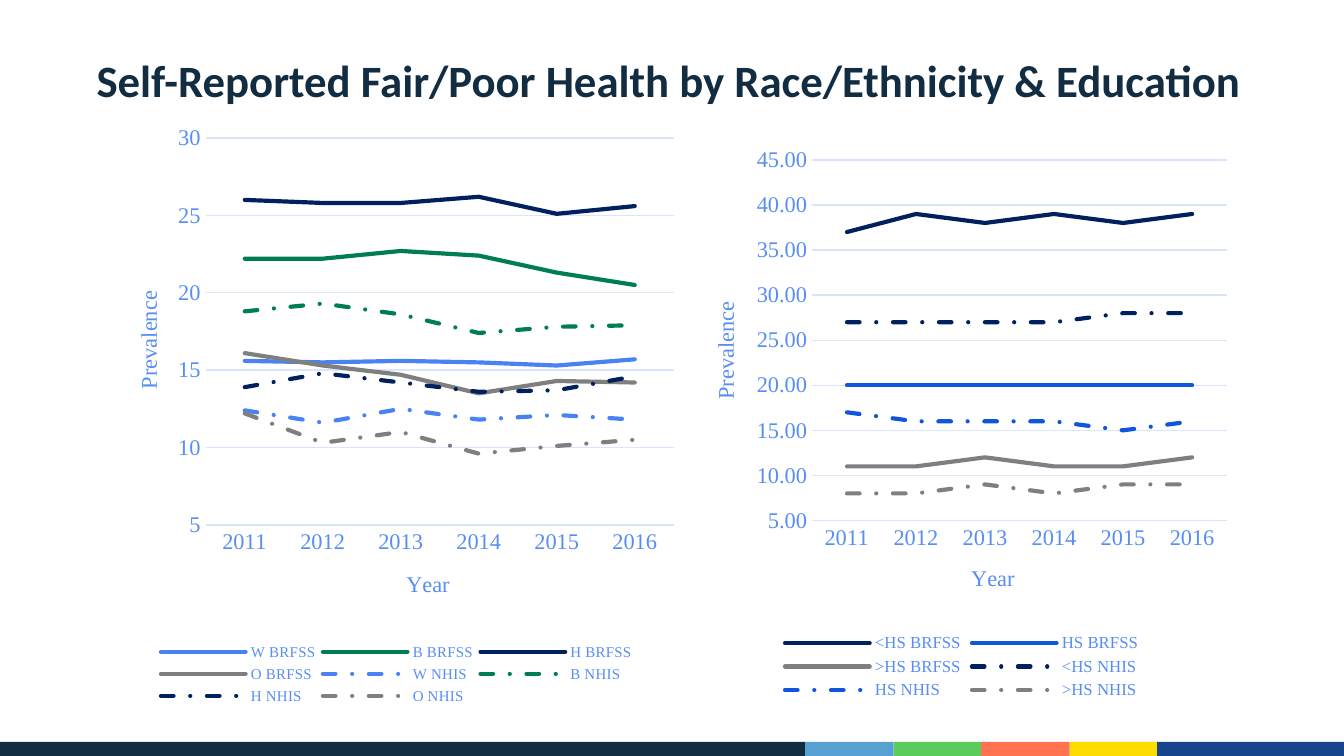
"""Build a slide with two line charts of self-reported fair/poor health."""
from lxml import etree
from pptx import Presentation
from pptx.chart.data import CategoryChartData
from pptx.dml.color import RGBColor
from pptx.enum.chart import XL_CHART_TYPE, XL_LEGEND_POSITION, XL_TICK_MARK
from pptx.enum.dml import MSO_LINE
from pptx.enum.shapes import MSO_SHAPE
from pptx.enum.text import MSO_ANCHOR, PP_ALIGN
from pptx.oxml.ns import qn
from pptx.util import Inches, Pt

LINE_CHART = XL_CHART_TYPE.LINE
BOTTOM = XL_LEGEND_POSITION.BOTTOM
NO_TICK = XL_TICK_MARK.NONE
DASH_DOT = MSO_LINE.DASH_DOT
RECTANGLE = MSO_SHAPE.RECTANGLE
MIDDLE = MSO_ANCHOR.MIDDLE
LEFT = PP_ALIGN.LEFT

WIDTH = 10
HEIGHT = WIDTH * 9 / 16
CHART_FONT = "Times New Roman"
COLORS = {
    "ink": "122C41", "sky": "56A0D3", "green": "5ACC5A", "coral": "FF7351",
    "yellow": "FDDC00", "royal": "17468F", "label": "588EF4", "grid": "D8E5FC",
    "light blue": "4983F2", "blue": "0F56DC", "forest": "007D57",
    "navy": "002060", "gray": "7F7F7F",
}
TITLE = "Self-Reported Fair/Poor Health by Race/Ethnicity & Education"
FOOTER_TOP = 5.52
FOOTER = [("ink", 0), ("sky", 5.99), ("green", 6.65), ("coral", 7.3),
          ("yellow", 7.96), ("royal", 8.61)]
YEARS = ["2011", "2012", "2013", "2014", "2015", "2016"]
CHARTS = [
    {
        "box": (0.8, 0.85, 4.3, 4.43), "maximum": 30, "format": "General",
        "legend size": 8,
        "plot": (0.17, 0.04, 0.81, 0.65), "legend": (0.08, 0.88, 0.84, 0.12),
        "year": (0.51, 0.76), "prevalence": (0.04, 0.29),
        "series": [
            ("W BRFSS", "light blue", (15.6, 15.5, 15.6, 15.5, 15.3, 15.7)),
            ("B BRFSS", "forest", (22.2, 22.2, 22.7, 22.4, 21.3, 20.5)),
            ("H BRFSS", "navy", (26, 25.8, 25.8, 26.2, 25.1, 25.6)),
            ("O BRFSS", "gray", (16.1, 15.3, 14.7, 13.5, 14.3, 14.2)),
            ("W NHIS", "light blue", (12.4, 11.6, 12.5, 11.8, 12.1, 11.8)),
            ("B NHIS", "forest", (18.8, 19.3, 18.6, 17.4, 17.8, 17.9)),
            ("H NHIS", "navy", (13.9, 14.8, 14.2, 13.6, 13.7, 14.6)),
            ("O NHIS", "gray", (12.2, 10.3, 11, 9.6, 10.1, 10.5)),
        ],
    },
    {
        "box": (5.1, 1.02, 4.11, 4.26), "maximum": 45, "format": "0.00",
        "legend size": 9,
        "plot": (0.23, 0.04, 0.75, 0.63), "legend": (0.17, 0.86, 0.66, 0.13),
        "year": (0.51, 0.74), "prevalence": (0.04, 0.28),
        "series": [
            ("<HS BRFSS", "navy", (37, 39, 38, 39, 38, 39)),
            ("HS BRFSS", "blue", (20, 20, 20, 20, 20, 20)),
            (">HS BRFSS", "gray", (11, 11, 12, 11, 11, 12)),
            ("<HS NHIS", "navy", (27, 27, 27, 27, 28, 28)),
            ("HS NHIS", "blue", (17, 16, 16, 16, 15, 16)),
            (">HS NHIS", "gray", (8, 8, 9, 8, 9, 9)),
        ],
    },
]


def color(name):
    return RGBColor.from_string(COLORS[name])


def style_font(font, size, name, face=CHART_FONT, bold=False):
    font.size, font.name, font.bold = Pt(size), face, bold
    font.color.rgb = color(name)


def style_line(line, name, width):
    line.color.rgb = color(name)
    line.width = Pt(width)


def place(element, position, shares, inner=False):
    """Give a chart part a manual layout in shares of the chart."""
    for old in element.findall(qn("c:layout")):
        element.remove(old)
    layout = etree.Element(qn("c:layout"))
    manual = etree.SubElement(layout, qn("c:manualLayout"))
    settings = [("layoutTarget", "inner")] if inner else []
    settings += [("xMode", "edge"), ("yMode", "edge")]
    settings += zip("xywh", shares)
    for tag, value in settings:
        etree.SubElement(manual, qn("c:" + tag)).set("val", str(value))
    element.insert(position, layout)


def style_axis(axis, text, shares):
    axis.major_tick_mark = axis.minor_tick_mark = NO_TICK
    style_font(axis.tick_labels.font, 12, "label")
    run = axis.axis_title.text_frame.paragraphs[0].add_run()
    run.text = text
    style_font(run.font, 12, "label")
    title = axis.axis_title._element
    place(title, 1, shares)
    return title


def add_line_chart(slide, content):
    data = CategoryChartData()
    data.categories = YEARS
    for name, _, values in content["series"]:
        data.add_series(name, values)
    box = [Inches(length) for length in content["box"]]
    chart = slide.shapes.add_chart(LINE_CHART, *box, data).chart
    chart.has_title = False
    style_font(chart.font, 12, "blue")

    for series, (name, shade, _) in zip(chart.plots[0].series, content["series"]):
        series.smooth = False
        style_line(series.format.line, shade, 2.25)
        if name.endswith("NHIS"):
            series.format.line.dash_style = DASH_DOT
        series._element.find(".//" + qn("a:ln")).set("cap", "rnd")
    chart.plots[0].vary_by_categories = False

    style_axis(chart.category_axis, "Year", content["year"])
    style_line(chart.category_axis.format.line, "grid", 0.75)
    axis = chart.value_axis
    title = style_axis(axis, "Prevalence", content["prevalence"])
    body = title.find(".//" + qn("a:bodyPr"))
    body.set("rot", "-5400000")
    body.set("vert", "horz")
    axis.minimum_scale, axis.maximum_scale, axis.major_unit = 5, content["maximum"], 5
    axis.tick_labels.number_format = content["format"]
    axis.tick_labels.number_format_is_linked = False
    axis.format.line.fill.background()
    style_line(axis.major_gridlines.format.line, "grid", 0.75)

    chart.has_legend = True
    chart.legend.position = BOTTOM
    chart.legend.include_in_layout = False
    style_font(chart.legend.font, content["legend size"], "label")
    place(chart.legend._element, 1, content["legend"])
    plot_area = chart._chartSpace.find(".//" + qn("c:plotArea"))
    place(plot_area, 0, content["plot"], inner=True)


def add_footer(slide):
    ends = [left for _, left in FOOTER[1:]] + [WIDTH]
    for (name, left), right in zip(FOOTER, ends):
        shape = slide.shapes.add_shape(
            RECTANGLE, Inches(left), Inches(FOOTER_TOP),
            Inches(right - left), Inches(HEIGHT - FOOTER_TOP))
        shape.shadow.inherit = False
        shape.fill.solid()
        shape.fill.fore_color.rgb = color(name)
        shape.line.fill.background()


def add_title(slide):
    box = slide.shapes.add_textbox(Inches(0.62), Inches(0.34), Inches(8.74), Inches(0.5))
    frame = box.text_frame
    frame.word_wrap = True
    frame.vertical_anchor = MIDDLE
    paragraph = frame.paragraphs[0]
    paragraph.alignment = LEFT
    run = paragraph.add_run()
    run.text = TITLE
    style_font(run.font, 24, "ink", "Calibri", True)


def main():
    presentation = Presentation()
    presentation.slide_width, presentation.slide_height = Inches(WIDTH), Inches(HEIGHT)
    slide = presentation.slides.add_slide(presentation.slide_layouts[6])
    add_footer(slide)
    add_title(slide)
    for content in CHARTS:
        add_line_chart(slide, content)
    presentation.save("out.pptx")


if __name__ == "__main__":
    main()
